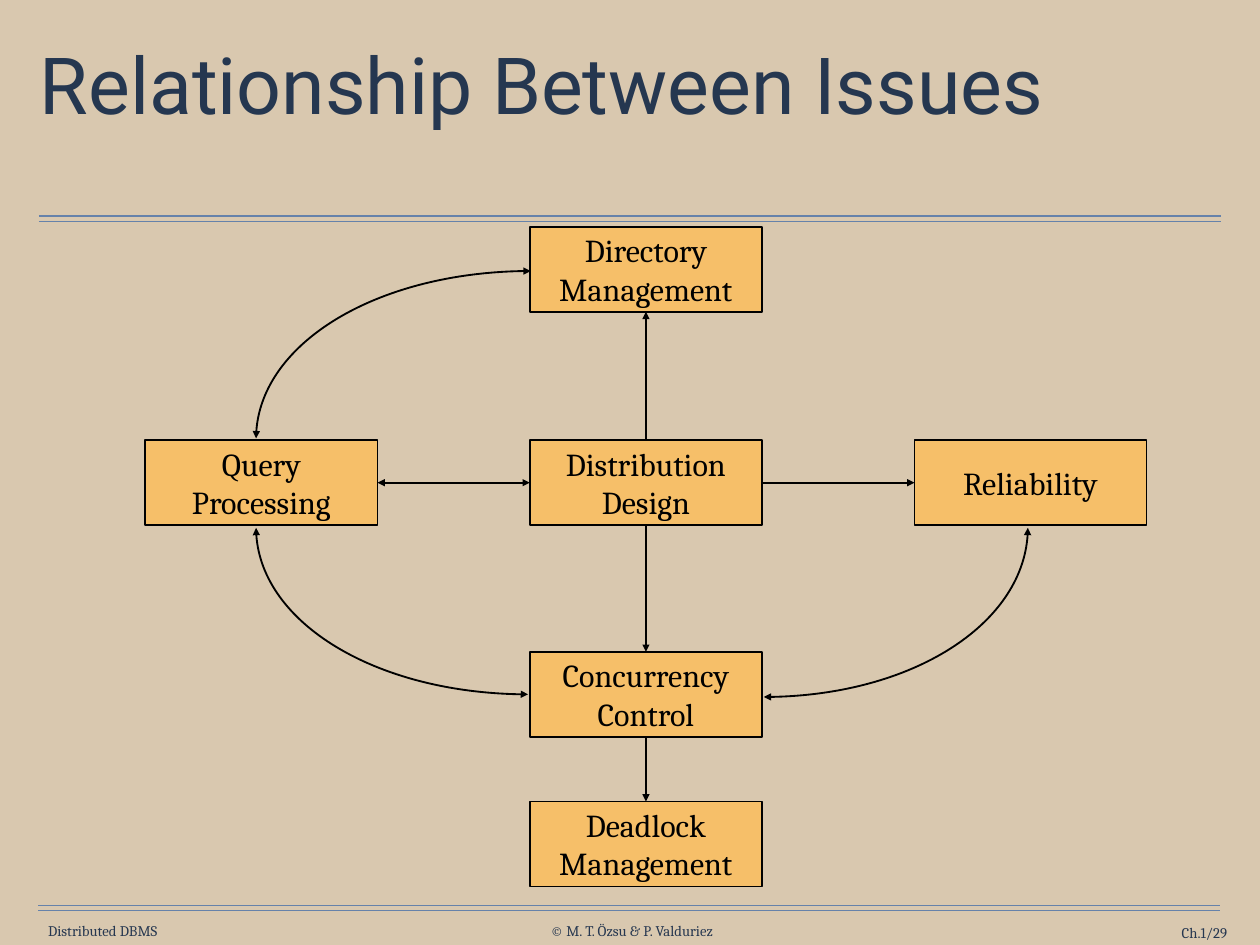
"""Build the slide on how the design issues of a distributed DBMS relate."""
import pptx
import pptx.util
import pptx.dml.color
import pptx.enum.shapes
import pptx.enum.text
import pptx.oxml.ns
import lxml.etree

Inches, Pt = pptx.util.Inches, pptx.util.Pt
qn = pptx.oxml.ns.qn
ALIGN = pptx.enum.text.PP_ALIGN
ANCHOR = pptx.enum.text.MSO_ANCHOR
INK, NAVY = "000000", "263750"


def rgb(value):
    return pptx.dml.color.RGBColor.from_string(value)


def draw_line(item, colour, width, arrows=()):
    item.line.color.rgb = rgb(colour)
    item.line.width = Pt(width)
    properties = item._element.spPr
    outline = properties.find(qn("a:ln"))
    for end in arrows:
        lxml.etree.SubElement(outline, qn(f"a:{end}"), type="triangle")
    lxml.etree.SubElement(properties, qn("a:effectLst"))


deck = pptx.Presentation()
deck.slide_width, deck.slide_height = Inches(14.22), Inches(10.67)
slide = deck.slides.add_slide(deck.slide_layouts[5])
slide.background.fill.solid()
slide.background.fill.fore_color.rgb = rgb("D9C8AF")
shapes = slide.shapes

for rule_left, rule_top in [(0.44, 2.44), (0.43, 10.22)]:
    for rule_y in (rule_top, rule_top + 0.06):
        rule = shapes.add_connector(
            pptx.enum.shapes.MSO_CONNECTOR.STRAIGHT,
            Inches(rule_left), Inches(rule_y),
            Inches(rule_left + 13.34), Inches(rule_y))
        draw_line(rule, "6682AA", 1)

heading = shapes.title
heading.left, heading.top = Inches(0.39), Inches(0.49)
heading.width, heading.height = Inches(13.44), Inches(1.76)
frame = heading.text_frame
frame.margin_left = frame.margin_right = Inches(0.06)
frame.margin_top = frame.margin_bottom = Inches(0.06)
frame.vertical_anchor = ANCHOR.TOP
frame.auto_size = pptx.enum.text.MSO_AUTO_SIZE.NONE
frame.word_wrap = False
frame.paragraphs[0].alignment = ALIGN.LEFT
frame.paragraphs[0].line_spacing = 0.87
run = frame.paragraphs[0].add_run()
run.text = "Relationship Between Issues"
run.font.name, run.font.size = "Roboto", Pt(64)
run.font.color.rgb = rgb("253750")

footers = [
    ("Distributed DBMS", 0.47, 10.41, 1.38, ALIGN.CENTER, False),
    ("© M. T. Özsu & P. Valduriez", 6.09, 10.41, 2.08, ALIGN.CENTER, False),
    ("Ch.1/29", 12.31, 10.43, 1.54, ALIGN.RIGHT, True),
]
for words, left, top, width, alignment, wrap in footers:
    footer = shapes.add_textbox(Inches(left), Inches(top), Inches(width), Inches(0.2))
    frame = footer.text_frame
    frame.margin_left = frame.margin_right = frame.margin_top = frame.margin_bottom = 0
    frame.vertical_anchor = ANCHOR.MIDDLE
    frame.word_wrap = wrap
    frame.paragraphs[0].alignment = alignment
    run = frame.paragraphs[0].add_run()
    run.text = words
    run.font.name, run.font.size = "Cambria", Pt(12)
    run.font.color.rgb = rgb(NAVY)

COLUMN_LEFT, COLUMN_STEP = 1.64, 4.34
ROW_TOPS = [2.56, 4.97, 7.36, 9.05]
issues = [
    ("Directory Management", 1, 0),
    ("Query Processing", 0, 1),
    ("Distribution Design", 1, 1),
    ("Reliability", 2, 1),
    ("Concurrency Control", 1, 2),
    ("Deadlock Management", 1, 3),
]
boxes = {}
for issue, column, row in issues:
    box = shapes.add_shape(
        pptx.enum.shapes.MSO_SHAPE.RECTANGLE,
        Inches(COLUMN_LEFT + column * COLUMN_STEP), Inches(ROW_TOPS[row]),
        Inches(2.62), Inches(0.96))
    box.fill.solid()
    box.fill.fore_color.rgb = rgb("F6BF69")
    draw_line(box, INK, 1.5)
    frame = box.text_frame
    frame.margin_left = frame.margin_right = Inches(0.14)
    frame.margin_top = frame.margin_bottom = Inches(0.07)
    frame.vertical_anchor = ANCHOR.MIDDLE
    frame.word_wrap = False
    for index, word in enumerate(issue.split()):
        paragraph = frame.add_paragraph() if index else frame.paragraphs[0]
        paragraph.alignment = ALIGN.CENTER
        run = paragraph.add_run()
        run.text = word
        run.font.name, run.font.size = "Cambria", Pt(26)
        run.font.color.rgb = rgb(INK)
    boxes[issue.split()[0]] = box

TOP, LEFT, BOTTOM, RIGHT = range(4)
BOTH = ("headEnd", "tailEnd")
influences = [
    ("Distribution", TOP, "Directory", BOTTOM, ("tailEnd",)),
    ("Distribution", BOTTOM, "Concurrency", TOP, ("tailEnd",)),
    ("Concurrency", BOTTOM, "Deadlock", TOP, ("tailEnd",)),
    ("Distribution", RIGHT, "Reliability", LEFT, ("tailEnd",)),
    ("Query", RIGHT, "Distribution", LEFT, BOTH),
]
for source, source_side, target, target_side, arrows in influences:
    influence = shapes.add_connector(
        pptx.enum.shapes.MSO_CONNECTOR.STRAIGHT, 0, 0, 0, 0)
    influence.begin_connect(boxes[source], source_side)
    influence.end_connect(boxes[target], target_side)
    draw_line(influence, INK, 1.5, arrows)

QUARTER = 0.55
quarter_ellipses = [
    (2.89, 4.95, 5.99, 3.06),
    (2.89, 5.96, 5.96, 7.84),
    (11.6, 5.96, 8.62, 7.87),
]
for side_x, side_y, middle_x, middle_y in quarter_ellipses:
    bend_y = side_y + QUARTER * (middle_y - side_y)
    bend_x = middle_x + QUARTER * (side_x - middle_x)
    builder = shapes.build_freeform(side_x, side_y, scale=Inches(1))
    builder.add_line_segments(
        [(side_x, bend_y), (bend_x, middle_y), (middle_x, middle_y)], close=False)
    builder = shapes.build_freeform(
        Inches(side_x), Inches(side_y))
    builder.add_line_segments(
        [(Inches(side_x), Inches(bend_y)), (Inches(bend_x), Inches(middle_y)),
         (Inches(middle_x), Inches(middle_y))], close=False)
    arc = builder.convert_to_shape()
    outline_path = arc._element.spPr.find(".//" + qn("a:path"))
    curve = lxml.etree.SubElement(outline_path, qn("a:cubicBezTo"))
    for segment in outline_path.findall(qn("a:lnTo")):
        curve.append(segment[0])
        outline_path.remove(segment)
    arc.fill.background()
    draw_line(arc, INK, 1.5, BOTH)

deck.save("out.pptx")
